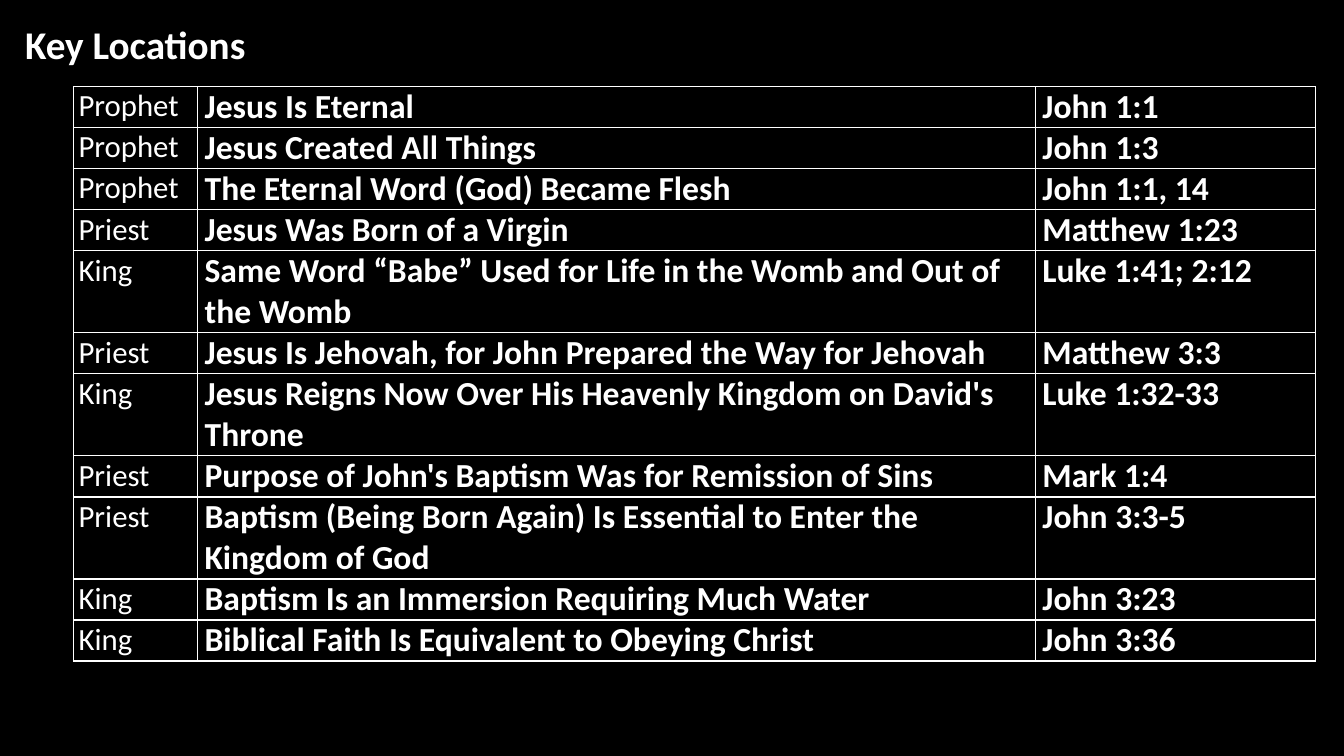
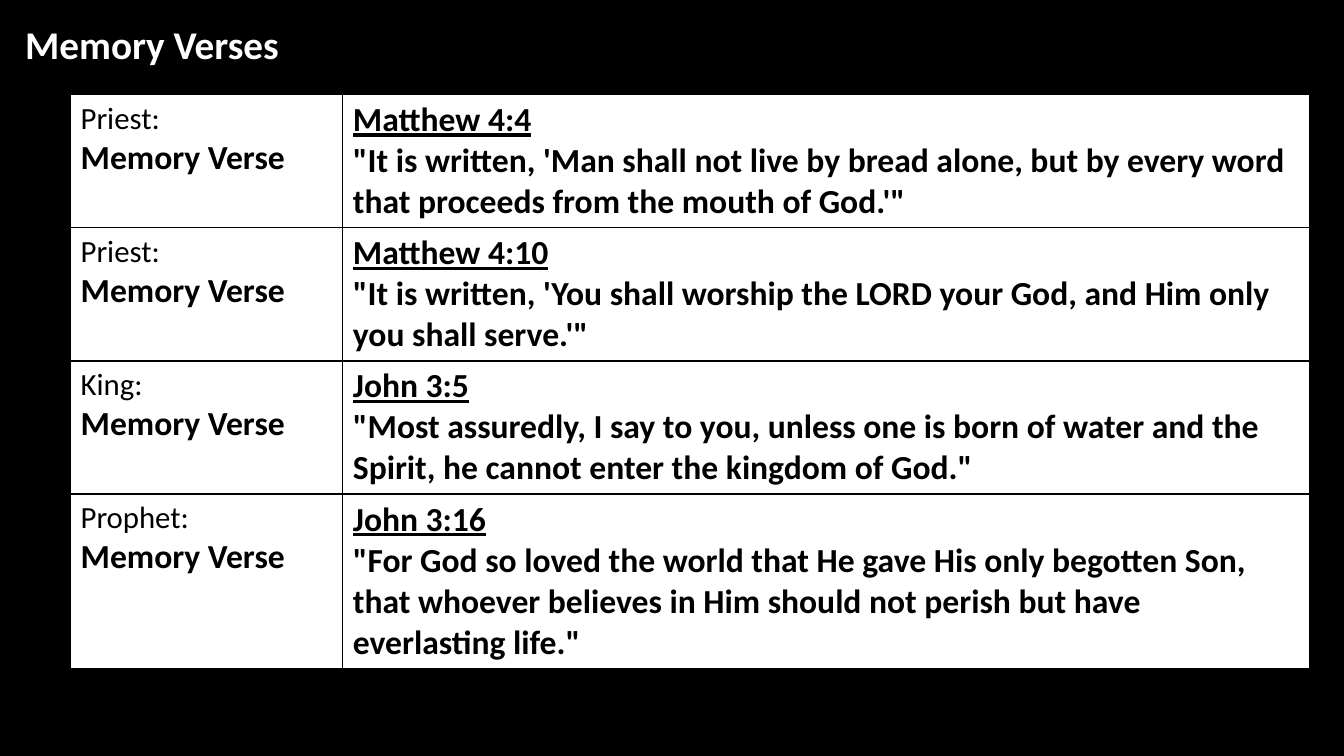
from math import ceil

from pptx import Presentation
from pptx.enum import text
from pptx.dml.color import RGBColor
from pptx.oxml import parse_xml
from pptx.oxml.ns import nsdecls
from pptx.util import Inches, Pt

COLORS = {"black": "000000", "white": "FFFFFF"}
FONT = "Calibri"
LINE_HEIGHT = 0.4

TITLE = {"size": 28, "bold": True}
ROLE = {"size": 22, "bold": False}
STRONG = {"size": 24, "bold": True}
REFERENCE = {**STRONG, "underline": True}

LOCATIONS = [
    ("Prophet", "Jesus Is Eternal", "John 1:1"),
    ("Prophet", "Jesus Created All Things", "John 1:3"),
    ("Prophet", "The Eternal Word (God) Became Flesh", "John 1:1, 14"),
    ("Priest", "Jesus Was Born of a Virgin", "Matthew 1:23"),
    ("King", "Same Word “Babe” Used for Life in the Womb and Out of the Womb", "Luke 1:41; 2:12"),
    ("Priest", "Jesus Is Jehovah, for John Prepared the Way for Jehovah", "Matthew 3:3"),
    ("King", "Jesus Reigns Now Over His Heavenly Kingdom on David's Throne", "Luke 1:32-33"),
    ("Priest", "Purpose of John's Baptism Was for Remission of Sins", "Mark 1:4"),
    ("Priest", "Baptism (Being Born Again) Is Essential to Enter the Kingdom of God", "John 3:3-5"),
    ("King", "Baptism Is an Immersion Requiring Much Water", "John 3:23"),
    ("King", "Biblical Faith Is Equivalent to Obeying Christ", "John 3:36"),
]

VERSES = [
    ("Priest:", "Matthew 4:4",
     "\"It is written, 'Man shall not live by bread alone, but by every word "
     "that proceeds from the mouth of God.'\""),
    ("Priest:", "Matthew 4:10",
     "\"It is written, 'You shall worship the LORD your God, and Him only you shall serve.'\""),
    ("King:", "John 3:5",
     "\"Most assuredly, I say to you, unless one is born of water and the Spirit, "
     "he cannot enter the kingdom of God.\""),
    ("Prophet:", "John 3:16",
     "\"For God so loved the world that He gave His only begotten Son, that whoever "
     "believes in Him should not perish but have everlasting life.\""),
]

LOCATION_TABLE = {
    "title": "Key Locations",
    "origin": (0.73, 0.86),
    "columns": (1.23, 8.31, 2.78),
    "insets": [(0.05, 0.01, 0.01, 0), (0.07, 0, 0.07, 0), (0.07, 0, 0.07, 0)],
    "ink": "white",
    "fill": None,
    "rows": [[[(role, ROLE)], [(event, STRONG)], [(passage, STRONG)]]
             for role, event, passage in LOCATIONS],
    "heights": [LINE_HEIGHT * ceil(len(event) / 56) for _, event, _ in LOCATIONS],
}

VERSE_TABLE = {
    "title": "Memory Verses",
    "origin": (0.7, 0.94),
    "columns": (2.7, 9.59),
    "insets": [(0.1, 0.05, 0.1, 0.05)] * 2,
    "ink": "black",
    "fill": "white",
    "rows": [[[(role, ROLE), ("Memory Verse", STRONG)],
              [(passage, REFERENCE), (verse, STRONG)]]
             for role, passage, verse in VERSES],
    "heights": [0.1 + LINE_HEIGHT * (1 + ceil(len(verse) / 65)) for _, _, verse in VERSES],
}


def rgb(name):
    return RGBColor.from_string(COLORS[name])


def write(frame, lines, ink):
    for index, (words, style) in enumerate(lines):
        paragraph = frame.add_paragraph() if index else frame.paragraphs[0]
        paragraph.alignment = text.PP_ALIGN.LEFT
        run = paragraph.add_run()
        run.text = words
        run.font.name = FONT
        run.font.color.rgb = rgb(ink)
        for key, value in style.items():
            setattr(run.font, key, Pt(value) if key == "size" else value)


def add_title(slide, words):
    title = slide.shapes.title
    for key, value in zip(("left", "top", "width", "height"), (0.15, 0.15, 11.66, 0.57)):
        setattr(title, key, Inches(value))
    frame = title.text_frame
    frame.word_wrap = True
    frame.auto_size = text.MSO_AUTO_SIZE.NONE
    frame.vertical_anchor = text.MSO_ANCHOR.TOP
    write(frame, [(words, TITLE)], "white")


def add_borders(cell, ink):
    properties = cell._tc.get_or_add_tcPr()
    for index, side in enumerate("LRTB"):
        properties.insert(index, parse_xml(
            f'<a:ln{side} {nsdecls("a")} w="{Pt(1)}"><a:solidFill>'
            f'<a:srgbClr val="{COLORS[ink]}"/></a:solidFill></a:ln{side}>'))


def format_cell(cell, lines, insets, ink, fill):
    for side, value in zip(("left", "top", "right", "bottom"), insets):
        setattr(cell, f"margin_{side}", Inches(value))
    cell.vertical_anchor = text.MSO_ANCHOR.TOP
    add_borders(cell, ink)
    if fill:
        cell.fill.solid()
        cell.fill.fore_color.rgb = rgb(fill)
    else:
        cell.fill.background()
    write(cell.text_frame, lines, ink)


def add_grid(slide, content):
    rows, columns, heights = content["rows"], content["columns"], content["heights"]
    extent = (*content["origin"], sum(columns), sum(heights))
    grid = slide.shapes.add_table(len(rows), len(columns), *map(Inches, extent)).table
    grid.first_row = grid.horz_banding = False
    for column, width in zip(grid.columns, columns):
        column.width = Inches(width)
    for row, height, entries in zip(grid.rows, heights, rows):
        row.height = Inches(height)
        for cell, lines, insets in zip(row.cells, entries, content["insets"]):
            format_cell(cell, lines, insets, content["ink"], content["fill"])


def main():
    deck = Presentation()
    deck.slide_width, deck.slide_height = Inches(13.33), Inches(7.5)
    backdrop = deck.slide_master.background.fill
    backdrop.solid()
    backdrop.fore_color.rgb = rgb("black")
    for content in (LOCATION_TABLE, VERSE_TABLE):
        slide = deck.slides.add_slide(deck.slide_layouts[5])
        add_title(slide, content["title"])
        add_grid(slide, content)
    deck.save("out.pptx")


if __name__ == "__main__":
    main()
